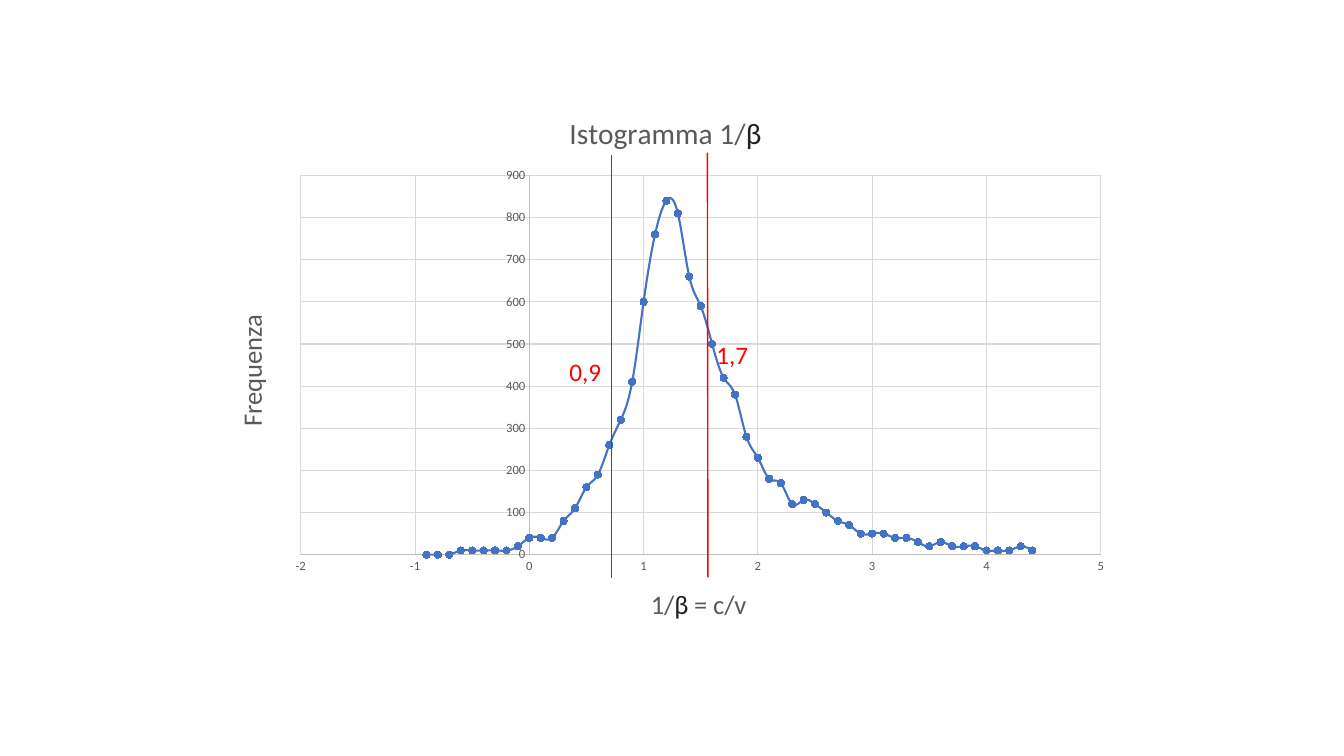
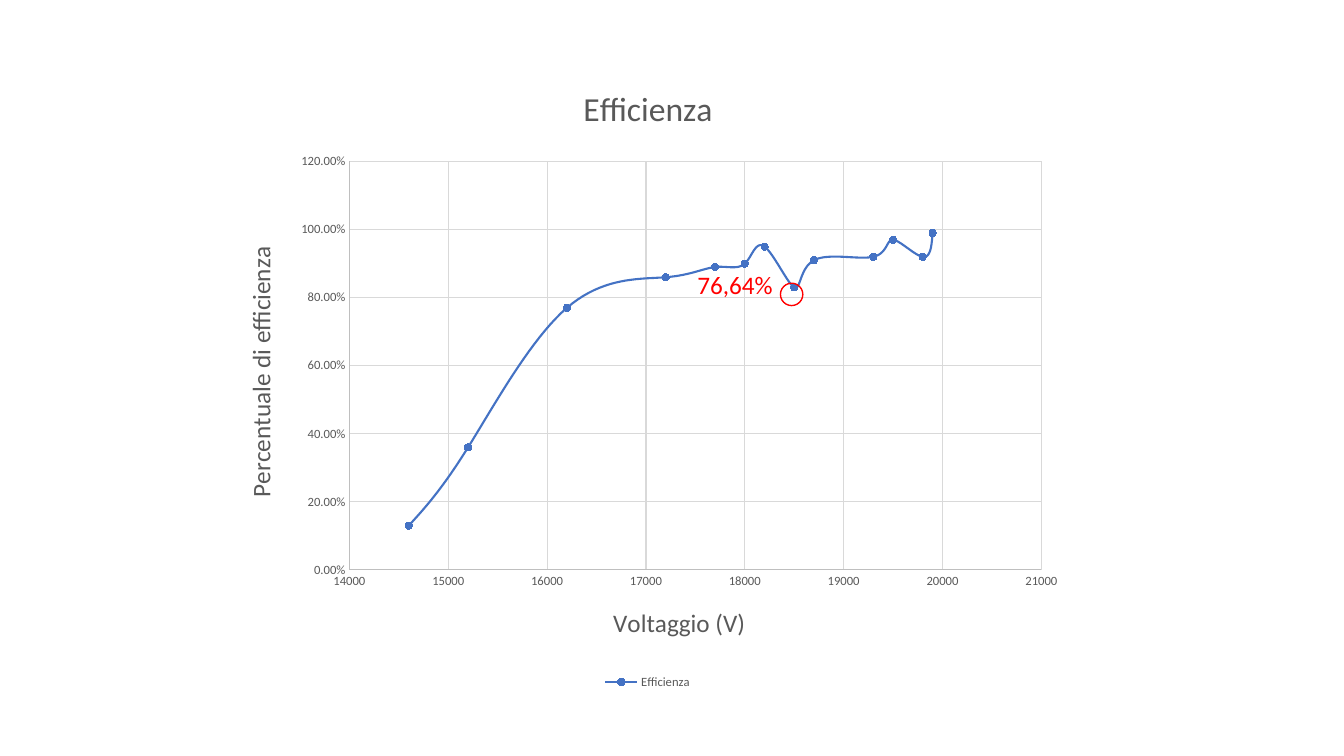
"""Build two slides with scatter charts of detector data."""
from lxml.etree import SubElement
from pptx import Presentation
from pptx.chart.data import XyChartData
from pptx.dml.color import RGBColor
from pptx.enum.chart import XL_CHART_TYPE as Kind
from pptx.enum.chart import XL_LEGEND_POSITION as Side
from pptx.enum.chart import XL_MARKER_STYLE as Mark
from pptx.enum.chart import XL_TICK_MARK as Tick
from pptx.enum.shapes import MSO_CONNECTOR as Link
from pptx.enum.shapes import MSO_SHAPE as Shape
from pptx.oxml.ns import qn
from pptx.util import Pt

FONT = "Calibri"
GREY, DARK, RED, BLUE = "595959", "202124", "FF0000", "4472C4"
AXIS, GRID = "BFBFBF", "D9D9D9"
tint = RGBColor.from_string


def write(frame, text, size=18, color=GREY):
    """Write text in one paragraph, with any beta in the dark colour."""
    for part in filter(None, text.partition("β")):
        run = frame.paragraphs[0].add_run()
        run.text = part
        run.font.name = FONT
        run.font.size = Pt(size)
        run.font.bold = False
        run.font.color.rgb = tint(DARK if part == "β" else color)


def place(node, frame, spot):
    """Fix a chart part at a spot given in slide points."""
    for old in node.findall(qn("c:layout")):
        node.remove(old)
    outer = SubElement(node, qn("c:layout"))
    node.insert(len(node.findall(qn("c:tx"))), outer)
    inner = SubElement(outer, qn("c:manualLayout"))
    left, top, width, height = frame
    parts = [("xMode", "edge"), ("yMode", "edge")]
    if len(spot) == 4:
        parts.insert(0, ("layoutTarget", "inner"))
    sizes = (width, height, width, height)
    starts = (left, top, 0, 0)
    for name, value, start, full in zip("xywh", spot, starts, sizes):
        parts.append((name, str(round((value - start) / full, 4))))
    for name, value in parts:
        SubElement(inner, qn(f"c:{name}")).set("val", value)


charts = [
    dict(
        name="Series 1", legend=False,
        frame=(150.5, 67, 651, 392.4), plot=(214.8, 125.3, 571.5, 271),
        title=("Istogramma 1/β", 21, (404.6, 79)),
        axes=[("1/β = c/v", 19, (462.8, 417.3), -2, 5, 1, "General"),
              ("Frequenza", 19, (163.3, 221.4), 0, 900, 100, "General")],
        xs=[n / 10 for n in range(-9, 45)],
        ys=[0, 0, 0, 10, 10, 10, 10, 10, 20, 40, 40, 40, 80, 110, 160, 190,
            260, 320, 410, 600, 760, 840, 810, 660, 590, 500, 420, 380, 280,
            230, 180, 170, 120, 130, 120, 100, 80, 70, 50, 50, 50, 40, 40,
            30, 20, 30, 20, 20, 20, 10, 10, 10, 20, 10],
        lines=[(437, 111, 437, 413), (505.3, 109, 505.7, 412.5)],
        rings=[],
        notes=[("0,9", 399.6, 251.3, 44), ("1,7", 504.7, 239, 44)],
    ),
    dict(
        name="Efficienza", legend=True,
        frame=(157.7, 44.6, 609.8, 450.7), plot=(249.6, 115.4, 494.3, 291.8),
        title=("Efficienza", 24, (412.4, 57.2)),
        axes=[("Voltaggio (V)", 18, (434.8, 429.3),
               14000, 21000, 1000, "General"),
              ("Percentuale di efficienza", 18, (170.4, 173),
               0, 1.2, 0.2, "0.00%")],
        xs=[14600, 15200, 16200, 17200, 17700, 18000, 18200, 18500, 18700,
            19300, 19500, 19800, 19900],
        ys=[0.13, 0.36, 0.77, 0.86, 0.89, 0.9, 0.95, 0.83, 0.91, 0.92, 0.97,
            0.92, 0.99],
        lines=[],
        rings=[(557.5, 202.3, 16)],
        notes=[("76,64%", 491, 188.8, 75)],
    ),
]

deck = Presentation()
deck.slide_width, deck.slide_height = Pt(960), Pt(540)

for item in charts:
    slide = deck.slides.add_slide(deck.slide_layouts[6])
    shapes = slide.shapes
    frame = item["frame"]

    data = XyChartData()
    points = data.add_series(item["name"])
    for x, y in zip(item["xs"], item["ys"]):
        points.add_data_point(x, y)
    chart = shapes.add_chart(
        Kind.XY_SCATTER_SMOOTH, *map(Pt, frame), data).chart
    chart.font.name = FONT
    chart.font.size = Pt(9)
    chart.font.color.rgb = tint(GREY)

    text, size, spot = item["title"]
    chart.has_title = True
    write(chart.chart_title.text_frame, text, size=size)
    place(chart.chart_title._element, frame, spot)
    place(chart._chartSpace.chart.plotArea, frame, item["plot"])

    chart.has_legend = item["legend"]
    if chart.has_legend:
        chart.legend.position = Side.BOTTOM
        chart.legend.include_in_layout = False

    pair = (chart.category_axis, chart.value_axis)
    for axis, (text, size, spot, low, high, step, form) in zip(
            pair, item["axes"]):
        axis.minimum_scale, axis.maximum_scale = low, high
        axis.major_unit = step
        axis.major_tick_mark = axis.minor_tick_mark = Tick.NONE
        axis.tick_labels.number_format = form
        axis.tick_labels.number_format_is_linked = False
        axis.has_major_gridlines = True
        for line, color in ((axis.format.line, AXIS),
                            (axis.major_gridlines.format.line, GRID)):
            line.color.rgb = tint(color)
            line.width = Pt(0.75)
        title = axis.axis_title
        write(title.text_frame, text, size=size)
        if axis is pair[1]:
            body = title.text_frame._txBody.bodyPr
            body.set("rot", "-5400000")
            body.set("vert", "horz")
        place(title._element, frame, spot)

    plot = chart.plots[0]
    plot.vary_by_categories = False
    curve = plot.series[0]
    curve._element.get_or_add_smooth().val = True
    curve.format.line.color.rgb = tint(BLUE)
    curve.format.line.width = Pt(1.5)
    curve.marker.style = Mark.CIRCLE
    curve.marker.size = 5
    dot = curve.marker.format
    dot.fill.solid()
    dot.fill.fore_color.rgb = tint(BLUE)
    dot.line.color.rgb = tint(BLUE)

    for ends in item["lines"]:
        rule = shapes.add_connector(Link.STRAIGHT, *map(Pt, ends))
        rule.line.color.rgb = tint(RED)
        rule.line.width = Pt(1)
        SubElement(rule._element.spPr, qn("a:effectLst"))

    for x, y, size in item["rings"]:
        ring = shapes.add_shape(
            Shape.OVAL, Pt(x), Pt(y), Pt(size), Pt(size))
        ring.shadow.inherit = False
        ring.fill.background()
        ring.line.color.rgb = tint(RED)
        ring.line.width = Pt(1)

    for text, x, y, width in item["notes"]:
        box = shapes.add_textbox(Pt(x), Pt(y), Pt(width), Pt(29))
        box.text_frame.word_wrap = True
        write(box.text_frame, text, color=RED)

deck.save("out.pptx")
